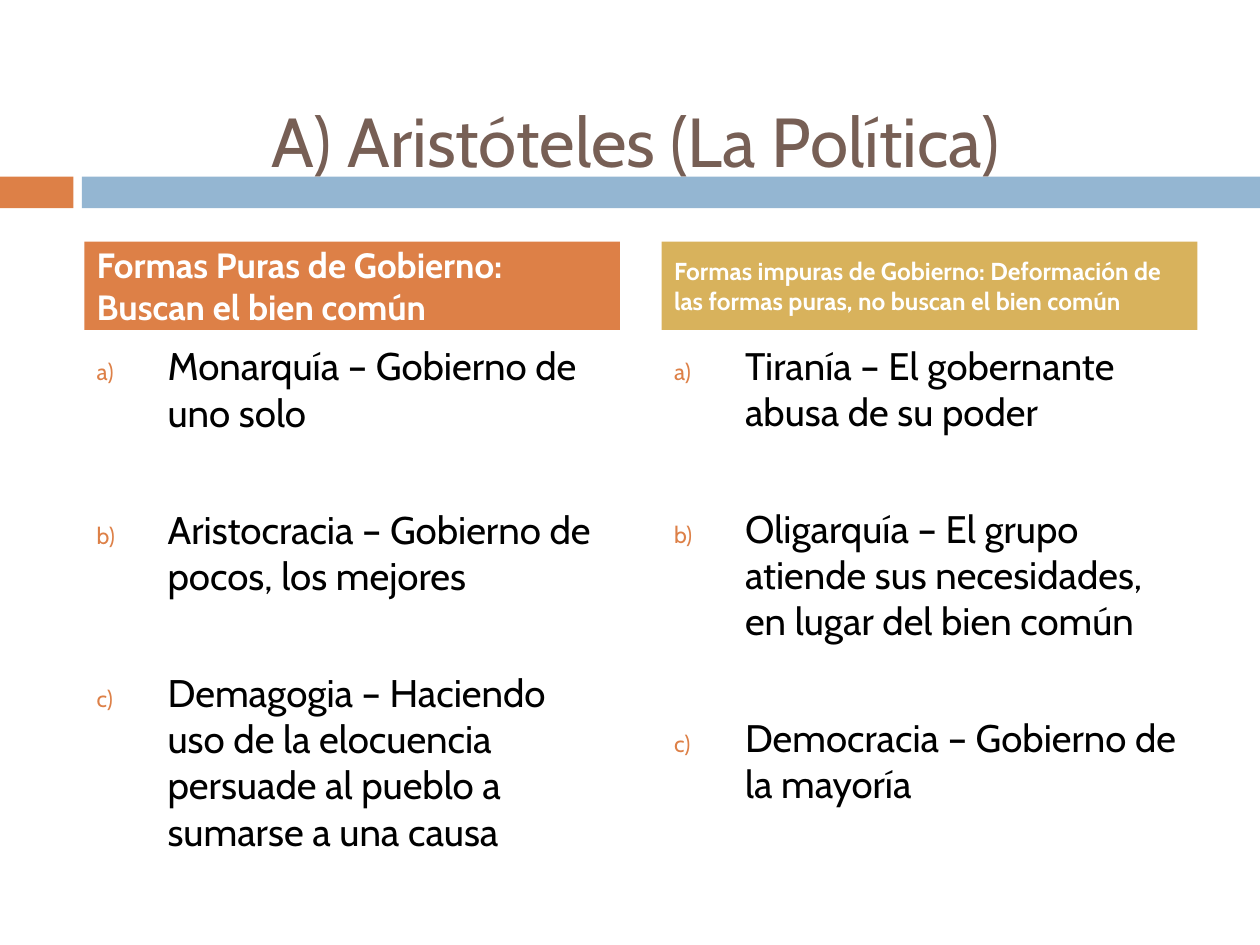
from pptx import Presentation
from pptx import util as u
from pptx.dml.color import RGBColor
from pptx.enum import shapes, text
from pptx.oxml.ns import qn
from lxml import etree

ORANGE = RGBColor(0xDD, 0x80, 0x47)
BLUE = RGBColor(0x94, 0xB6, 0xD2)
GOLD = RGBColor(0xD8, 0xB2, 0x5C)
BROWN = RGBColor(0x77, 0x5F, 0x55)
WHITE = RGBColor(0xFF, 0xFF, 0xFF)
BLACK = RGBColor(0, 0, 0)
FONT = "Cabin"
WIDTH = 10.8
INDENT = u.Cm(1.43)

COLUMNS = [
    (1.7, ORANGE, 20, "Formas Puras de Gobierno: Buscan el bien común", 22,
     ["Monarquía – Gobierno de uno solo",
      "Aristocracia – Gobierno de pocos, los mejores",
      "Demagogia – Haciendo uso de la elocuencia persuade al pueblo "
      "a sumarse a una causa"]),
    (13.34, GOLD, 14, "Formas impuras de Gobierno: Deformación de las formas "
     "puras, no buscan el bien común", 21.9,
     ["Tiranía – El gobernante abusa de su poder",
      "Oligarquía – El grupo atiende sus necesidades, en lugar del bien común",
      "Democracia – Gobierno de la mayoría"]),
]


def add_bar(slide, left, top, width, height, color):
    bar = slide.shapes.add_shape(
        shapes.MSO_SHAPE.RECTANGLE, *map(u.Cm, (left, top, width, height)))
    bar.shadow.inherit = False
    bar.fill.solid()
    bar.fill.fore_color.rgb = color
    bar.line.fill.background()
    return bar


def add_box(slide, left, top, width, height):
    return slide.shapes.add_textbox(*map(u.Cm, (left, top, width, height)))


def put_text(shape, lines, size, color, bold=False, gap=0,
             align=text.PP_ALIGN.LEFT, anchor=text.MSO_ANCHOR.MIDDLE):
    frame = shape.text_frame
    frame.word_wrap = True
    frame.vertical_anchor = anchor
    for i, line in enumerate(lines):
        para = frame.paragraphs[0] if i == 0 else frame.add_paragraph()
        para.alignment = align
        para.space_before = u.Pt(gap if i else 0)
        run = para.add_run()
        run.text = line
        run.font.name = FONT
        run.font.size = u.Pt(size)
        run.font.bold = bold
        run.font.color.rgb = color


def add_letters(shape, color):
    for para in shape.text_frame.paragraphs:
        props = para._p.get_or_add_pPr()
        props.set("marL", str(INDENT))
        props.set("indent", str(-INDENT))
        tint = etree.SubElement(props, qn("a:buClr"))
        etree.SubElement(tint, qn("a:srgbClr"), val=str(color))
        etree.SubElement(props, qn("a:buSzPct"), val="60000")
        etree.SubElement(props, qn("a:buFont"), typeface=FONT)
        etree.SubElement(props, qn("a:buAutoNum"), type="alphaLcParenR")


def add_column(slide, left, fill, size, head, body, items):
    bar = add_bar(slide, left, 4.87, WIDTH, 1.78, fill)
    put_text(bar, [head], size, WHITE, bold=True)
    box = add_box(slide, left, 6.78, WIDTH, 9.96)
    put_text(box, items, body, BLACK, gap=40.5, anchor=text.MSO_ANCHOR.TOP)
    add_letters(box, ORANGE)


def main():
    deck = Presentation()
    deck.slide_width, deck.slide_height = u.Cm(25.4), u.Cm(19.05)
    slide = deck.slides.add_slide(deck.slide_layouts[6])
    add_bar(slide, 0, 3.56, 1.48, 0.64, ORANGE)
    add_bar(slide, 1.65, 3.56, 23.75, 0.64, BLUE)
    title = add_box(slide, 1.48, 1.61, 22.66, 2.41)
    put_text(title, ["A) Aristóteles (La Política)"], 39.6, BROWN,
             align=text.PP_ALIGN.CENTER)
    for column in COLUMNS:
        add_column(slide, *column)
    deck.save("out.pptx")


if __name__ == "__main__":
    main()
